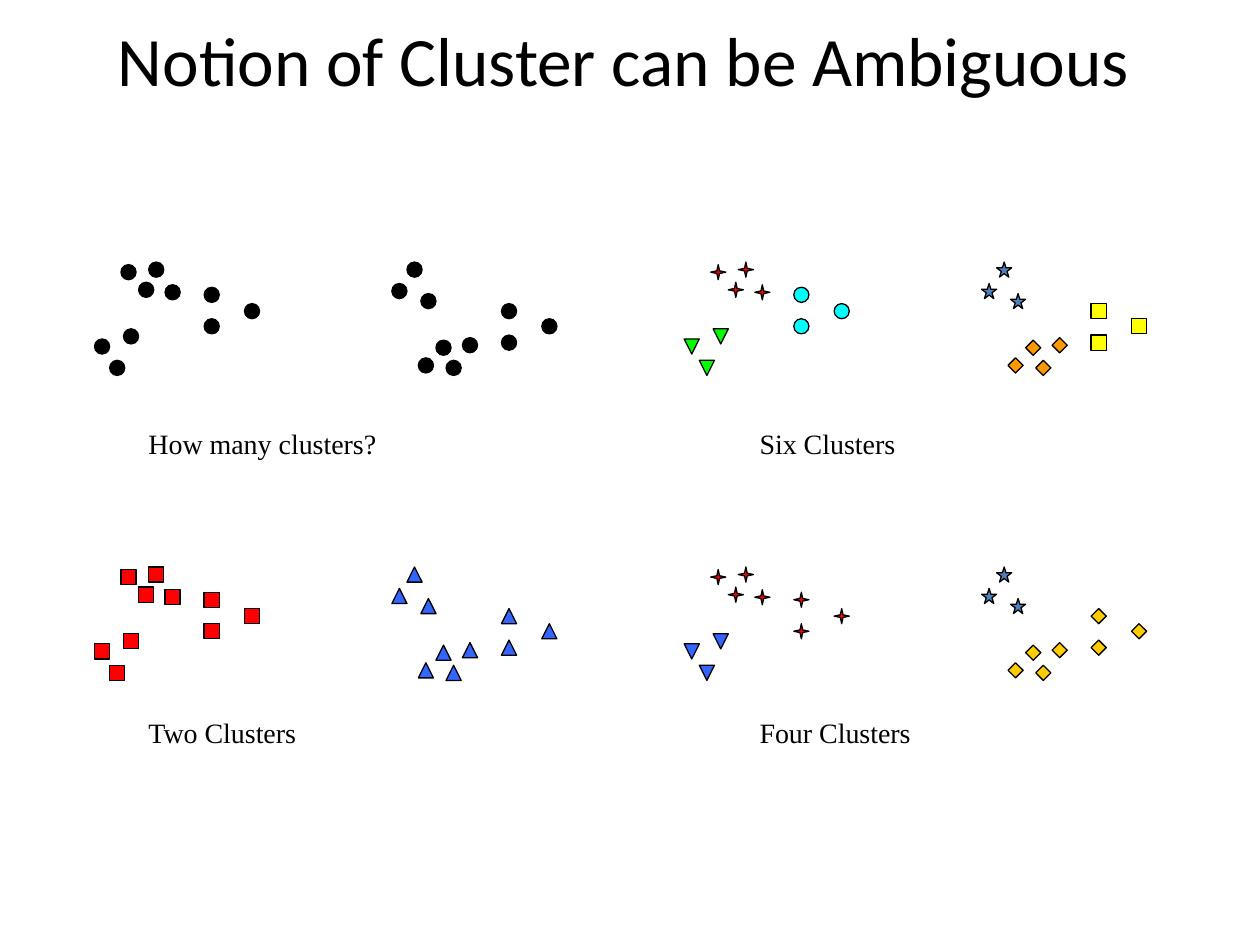
from pptx import Presentation
from pptx.dml.color import RGBColor
from pptx.enum.shapes import MSO_SHAPE
from pptx.enum.text import MSO_ANCHOR, PP_ALIGN
from pptx.util import Inches, Pt

HUES = {
    "black": "000000", "red": "FF0000", "blue": "3366FF", "steel": "4F81BD",
    "gold": "FFCC00", "orange": "FF9900", "yellow": "FFFF00",
    "green": "00FF00", "cyan": "00FFFF",
}
MARKS = {
    "dot": MSO_SHAPE.OVAL, "box": MSO_SHAPE.RECTANGLE,
    "peak": MSO_SHAPE.ISOSCELES_TRIANGLE, "gem": MSO_SHAPE.DIAMOND,
    "spark": MSO_SHAPE.STAR_4_POINT, "star": MSO_SHAPE.STAR_5_POINT,
    "merge": MSO_SHAPE.FLOWCHART_EXTRACT,
}
TURNED = ("drop", "merge")
MARKS["drop"] = MARKS["peak"]

SIZE = 0.12
SHIFT = 2.36
DEPTH = 0.78
QUAD = [(0.56, 0.18), (0.21, 0.02), (0.43, 0), (0.35, 0.16)]
TRIO = [(0.23, 0.53), (0, 0.61), (0.12, DEPTH)]
SIDE = [(0.87, 0.2), (1.19, 0.33), (0.87, 0.45)]
SETS = [QUAD, TRIO, SIDE]

DOTS = [("dot", "black")] * 3
BOXES = [("box", "red")] * 3
PEAKS = [("peak", "blue")] * 3
SIX_LEFT = [("spark", "red"), ("drop", "green"), ("dot", "cyan")]
SIX_RIGHT = [("gem", "orange"), ("star", "steel"), ("box", "yellow")]
FOUR_LEFT = [("spark", "red"), ("merge", "blue"), ("spark", "red")]
FOUR_RIGHT = [("gem", "gold"), ("star", "steel"), ("gem", "gold")]

COLS = [0.75, 5.43]
ROWS = [2.08, 4.5]
INDENTS = [0.33, 0.5]
DROPS = [1.25, 1.13]
PANELS = [
    [("How many clusters?", DOTS, DOTS), ("Six Clusters", SIX_LEFT, SIX_RIGHT)],
    [("Two Clusters", BOXES, PEAKS), ("Four Clusters", FOUR_LEFT, FOUR_RIGHT)],
]


def color(name):
    return RGBColor.from_string(HUES[name])


def add_text(shapes, box, text, font, size, align=PP_ALIGN.LEFT):
    frame = shapes.add_textbox(*map(Inches, box)).text_frame
    frame.word_wrap = True
    frame.vertical_anchor = MSO_ANCHOR.MIDDLE
    para = frame.paragraphs[0]
    para.alignment = align
    run = para.add_run()
    run.text = text
    run.font.name = font
    run.font.size = Pt(size)
    run.font.color.rgb = color("black")


def add_mark(shapes, left, top, kind, hue):
    mark = shapes.add_shape(MARKS[kind], Inches(left), Inches(top),
                            Inches(SIZE), Inches(SIZE))
    mark.shadow.inherit = False
    mark.fill.solid()
    mark.fill.fore_color.rgb = color(hue)
    mark.line.color.rgb = color("black")
    mark.line.width = Pt(0.75)
    if kind in TURNED:
        mark.rotation = 180


def add_panel(slide, left, top, indent, drop, label, near, far):
    shapes = slide.shapes.add_group_shape().shapes
    for points, style in zip(SETS, far):
        for x, y in points:
            add_mark(shapes, left + SHIFT + x, top + DEPTH - y, *style)
    for points, style in zip(SETS, near):
        for x, y in points:
            add_mark(shapes, left + x, top + y, *style)
    add_text(shapes, (left + indent, top + drop, 2.5, 0.37),
             label, "Times New Roman", 16)


def main():
    deck = Presentation()
    deck.slide_width = Inches(10)
    deck.slide_height = Inches(7.5)
    slide = deck.slides.add_slide(deck.slide_layouts[6])
    add_text(slide.shapes, (0.42, 0.17, 9.06, 0.6),
             "Notion of Cluster can be Ambiguous", "Calibri", 39.6,
             PP_ALIGN.CENTER)
    for top, drop, row in zip(ROWS, DROPS, PANELS):
        for left, indent, panel in zip(COLS, INDENTS, row):
            add_panel(slide, left, top, indent, drop, *panel)
    deck.save("out.pptx")


if __name__ == "__main__":
    main()
